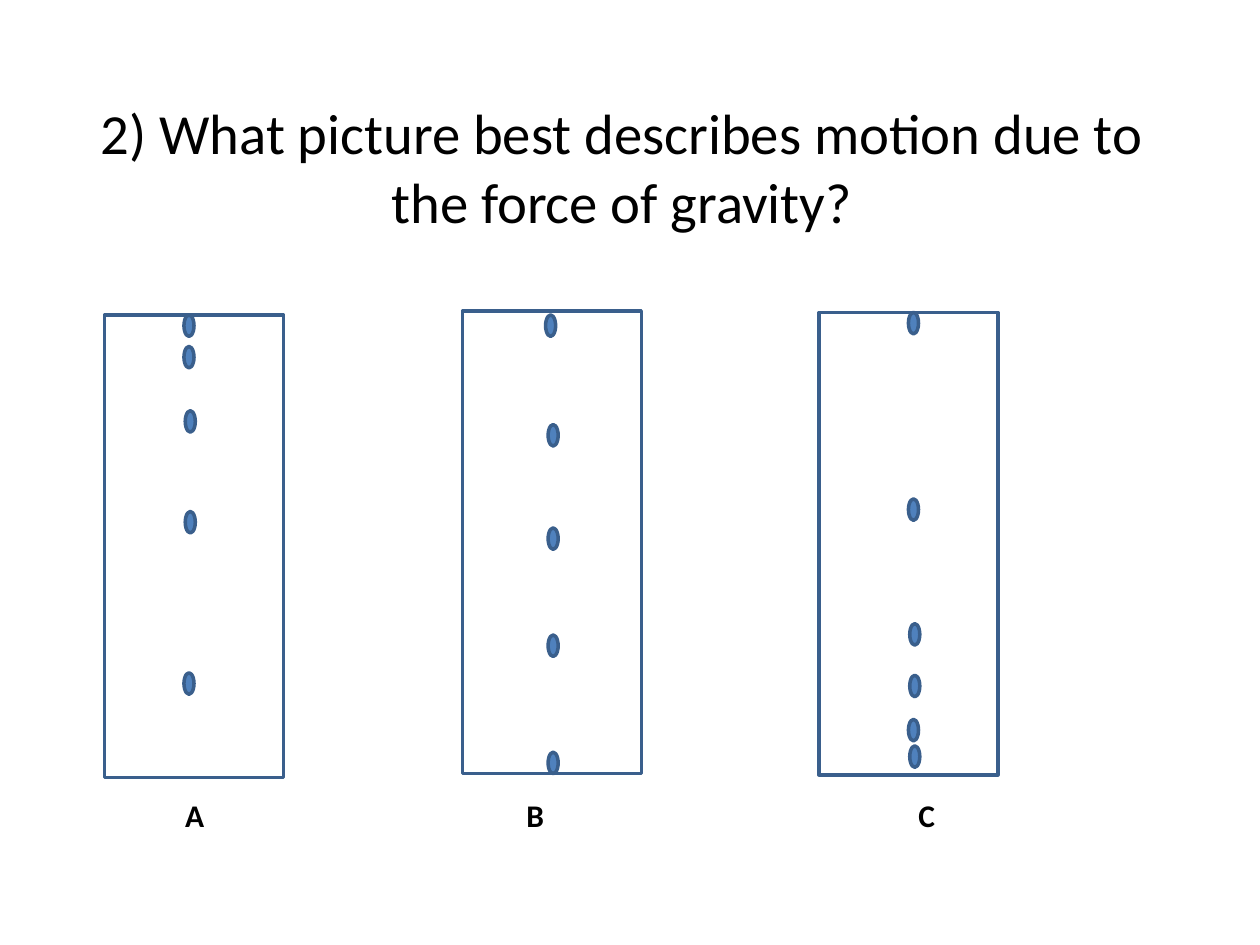
from pptx import Presentation
from pptx import util as u
from pptx.dml.color import RGBColor
from pptx.enum import shapes, text

PX = 9144  # 100 px to the inch
BLACK = RGBColor(0x00, 0x00, 0x00)
WHITE = RGBColor(0xFF, 0xFF, 0xFF)
BLUE = RGBColor(0x4F, 0x81, 0xBD)
NAVY = RGBColor(0x3A, 0x5F, 0x8C)

PANEL_SIZE = (142, 367)
BALL_SIZE = (8, 17)
LABEL_TOP = 627

# Letter, panel corner, label (left, width, indent), ball positions in the panel
PANELS = [
    ("A", (83, 250), (25, 142, 29),
     [(63, 0), (63, 25), (64, 76), (64, 156), (63, 284)]),
    ("B", (367, 247), (41, 242, 0),
     [(66, 3), (68, 90), (68, 172), (68, 257), (68, 350)]),
    ("C", (650, 248), (69, 242, 0),
     [(71, 0), (71, 148), (72, 247), (72, 288), (71, 323), (72, 344)]),
]


def emu(*lengths):
    return [u.Emu(length * PX) for length in lengths]


def add_run(para, words, size, bold=False):
    span = para.add_run()
    span.text = words
    span.font.name = "Calibri"
    span.font.size = u.Pt(size)
    span.font.bold = bold
    span.font.color.rgb = BLACK


def add_outlined(page, kind, box, fill):
    shape = page.shapes.add_shape(kind, *emu(*box))
    shape.shadow.inherit = False
    shape.fill.solid()
    shape.fill.fore_color.rgb = fill
    shape.line.color.rgb = NAVY
    shape.line.width = u.Pt(2)


def add_title(page, box):
    title = page.shapes.title
    title.left, title.top, title.width, title.height = emu(*box)
    frame = title.text_frame
    frame.word_wrap = True
    frame.auto_size = text.MSO_AUTO_SIZE.NONE
    frame.vertical_anchor = text.MSO_ANCHOR.MIDDLE
    para = frame.paragraphs[0]
    para.alignment = text.PP_ALIGN.CENTER
    add_run(para, "2) What picture best describes motion due to the force of gravity?", 32.4)


def add_panel(page, letter, corner, label, balls):
    left, top = corner
    # Frame
    add_outlined(page, shapes.MSO_SHAPE.RECTANGLE, (left, top, *PANEL_SIZE), WHITE)
    # Falling ball at equal time steps
    for across, down in balls:
        add_outlined(page, shapes.MSO_SHAPE.OVAL,
                     (left + across, top + down, *BALL_SIZE), BLUE)
    # Letter below the frame
    offset, width, indent = label
    box = page.shapes.add_textbox(*emu(left + offset, LABEL_TOP, width, 40))
    box.text_frame.word_wrap = True
    para = box.text_frame.paragraphs[0]
    if indent:
        para._p.get_or_add_pPr().set("marL", str(indent * PX))
    add_run(para, letter, 18, bold=True)


def main():
    deck = Presentation()
    deck.slide_width, deck.slide_height = emu(1000, 750)
    page = deck.slides.add_slide(deck.slide_layouts[5])
    add_title(page, (42, 75, 903, 114))
    for panel in PANELS:
        add_panel(page, *panel)
    deck.save("out.pptx")


if __name__ == "__main__":
    main()
